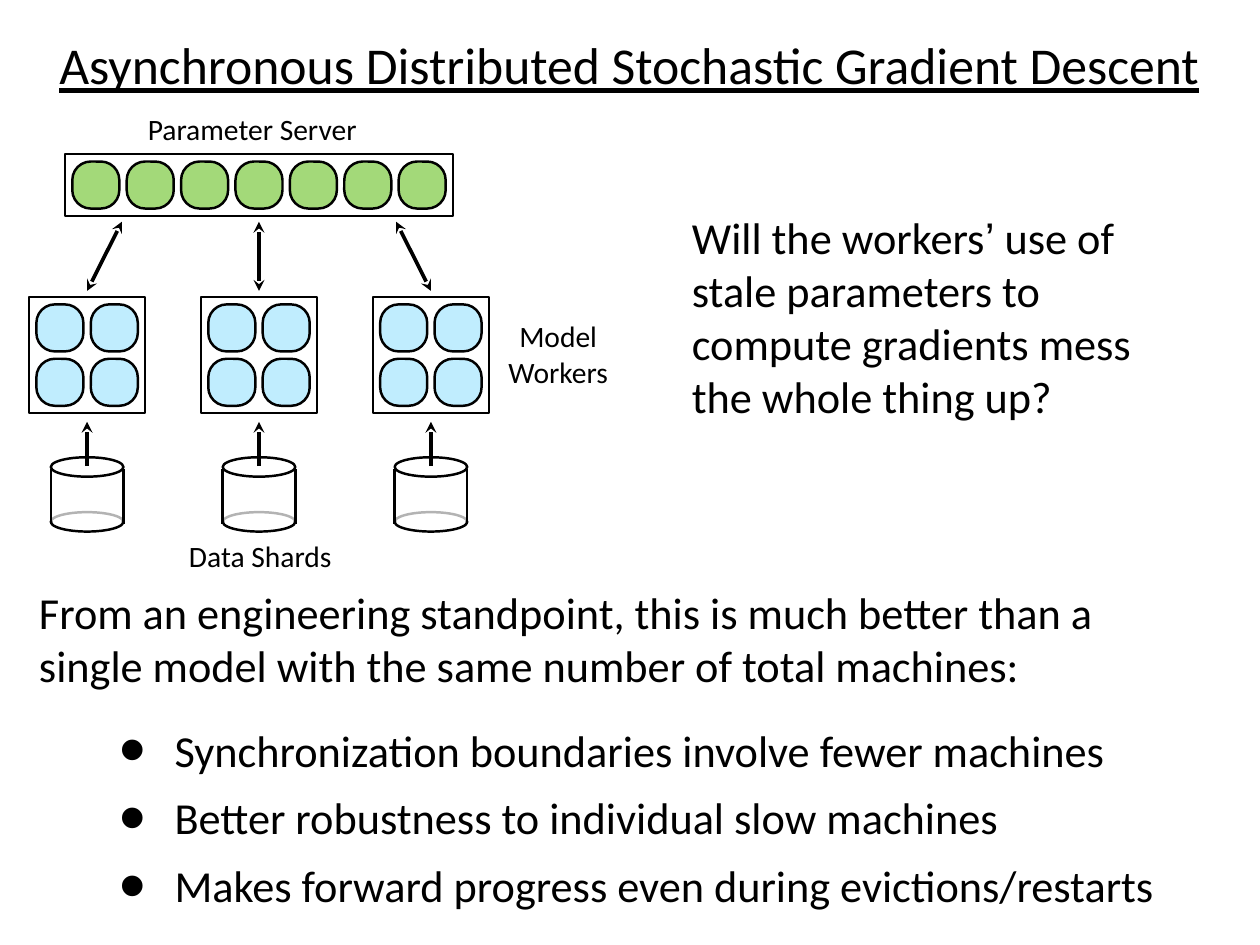
from lxml.etree import SubElement
from pptx import Presentation
from pptx.dml.color import RGBColor
from pptx.enum.shapes import MSO_CONNECTOR, MSO_SHAPE
from pptx.enum.text import MSO_ANCHOR, MSO_AUTO_SIZE, PP_ALIGN
from pptx.oxml.ns import qn
from pptx.util import Pt

BLACK = RGBColor(0x00, 0x00, 0x00)
WHITE = RGBColor(0xFF, 0xFF, 0xFF)
GREEN = RGBColor(0xA3, 0xD9, 0x79)
BLUE = RGBColor(0xC0, 0xED, 0xFE)

CELL, GAP = 38.2, 6
LINE_WIDTH, ARROW_WIDTH = 2, 3
FRAME_FORMAT = {
    "word_wrap": True,
    "auto_size": MSO_AUTO_SIZE.NONE,
    "vertical_anchor": MSO_ANCHOR.MIDDLE,
    "margin_left": 0,
    "margin_top": 0,
    "margin_right": 0,
    "margin_bottom": 0,
}


def set_attributes(target, values):
    """Set every attribute of target named in values."""
    for name, value in values.items():
        setattr(target, name, value)


def write_text(frame, paragraphs, size, alignment=PP_ALIGN.LEFT, underline=None):
    """Fill a text frame, setting apostrophes in Arial and the rest in Calibri."""
    set_attributes(frame, FRAME_FORMAT)
    for index, text in enumerate(paragraphs):
        paragraph = frame.add_paragraph() if index else frame.paragraphs[0]
        paragraph.alignment = alignment
        before, apostrophe, after = text.partition("’")
        for piece in filter(None, (before, apostrophe, after)):
            run = paragraph.add_run()
            run.text = piece
            name = "Arial" if piece == "’" else "Calibri"
            set_attributes(run.font, {"name": name, "size": Pt(size), "underline": underline})
            run.font.color.rgb = BLACK


def add_text(slide, box, paragraphs, size, alignment=PP_ALIGN.LEFT):
    """Add a text box and return its frame."""
    frame = slide.shapes.add_textbox(*map(Pt, box)).text_frame
    write_text(frame, paragraphs, size, alignment)
    return frame


def add_outline(slide, kind, box, fill=None, outlined=True):
    """Add a preset shape with an optional fill and black outline."""
    shape = slide.shapes.add_shape(kind, *map(Pt, box))
    shape.shadow.inherit = False
    if fill is None:
        shape.fill.background()
    else:
        shape.fill.solid()
        shape.fill.fore_color.rgb = fill
    if outlined:
        shape.line.color.rgb = BLACK
        shape.line.width = Pt(LINE_WIDTH)
    else:
        shape.line.fill.background()
    return shape


def add_line(slide, start, end, width, arrowheads=()):
    """Add a straight black line with stealth heads at the named ends."""
    line = slide.shapes.add_connector(MSO_CONNECTOR.STRAIGHT, *map(Pt, start + end))
    line.line.color.rgb = BLACK
    line.line.width = Pt(width)
    outline = line.line._get_or_add_ln()
    for arrowhead in arrowheads:
        SubElement(outline, qn(f"a:{arrowhead}"), type="stealth")
    SubElement(line._element.spPr, qn("a:effectLst"))


def add_cells(slide, box, columns, rows, fill):
    """Draw a frame holding an even grid of rounded cells."""
    left, top, width, height = box
    pitch = CELL + GAP
    for row in range(rows):
        for column in range(columns):
            place = (left + GAP + column * pitch, top + GAP + row * pitch, CELL, CELL)
            cell = add_outline(slide, MSO_SHAPE.ROUNDED_RECTANGLE, place, fill)
            cell.adjustments[0] = 0.393
    add_outline(slide, MSO_SHAPE.RECTANGLE, box)


def add_shard(slide, box):
    """Draw a data cylinder with a faded back rim and an arrow rising from it."""
    left, top, width, height = box
    rim = 15.8
    add_outline(slide, MSO_SHAPE.OVAL, (left, top + height - rim, width, rim))
    veil_box = (left, top + 10, width, height - rim - 2.8)
    veil = add_outline(slide, MSO_SHAPE.RECTANGLE, veil_box, WHITE, outlined=False)
    color = veil._element.spPr.find(f".//{qn('a:srgbClr')}")
    SubElement(color, qn("a:alpha"), val="70000")
    add_outline(slide, MSO_SHAPE.OVAL, (left, top, width, rim))
    for side in (left, left + width):
        add_line(slide, (side, top + 9.4), (side, top + height - 6.5), LINE_WIDTH)
    center = left + width / 2
    add_line(slide, (center, top + 7.2), (center, top - 28.8), ARROW_WIDTH, ["tailEnd"])


def add_diagram(slide, box):
    """Draw the parameter server, the model workers and the data shards."""
    left, top, width, height = box
    columns, pitch, spread = 7, 139.7, 111.4
    worker = 2 * CELL + 3 * GAP
    server_width = columns * CELL + (columns + 1) * GAP
    center = left + worker / 2 + pitch
    server = (center - server_width / 2, top + 38.9, server_width, CELL + 2 * GAP)
    add_text(slide, (left + 96.5, top, 181, 36), ["Parameter Server"], 24)
    add_cells(slide, server, columns, 1, GREEN)
    for position in (-1, 0, 1):
        middle = center + position * pitch
        add_cells(slide, (middle - worker / 2, top + 155, worker, worker), 2, 2, BLUE)
        add_line(slide, (center + position * spread, top + 93.8), (middle, top + 150),
                 ARROW_WIDTH, ["headEnd", "tailEnd"])
        add_shard(slide, (middle - 29.5, top + 285.2, 59, 60.4))
    labels_right = left + width - 104
    add_text(slide, (labels_right, top + 169, 104, 64), ["Model", "Workers"], 24, PP_ALIGN.CENTER)
    add_text(slide, (center - 80, top + height - 36, 162, 36), ["Data Shards"], 24, PP_ALIGN.CENTER)


def add_title(slide, box, text):
    """Place the underlined slide title."""
    title = slide.shapes.title
    set_attributes(title, dict(zip(("left", "top", "width", "height"), map(Pt, box))))
    write_text(title.text_frame, [text], 42, PP_ALIGN.CENTER, True)


def add_benefits(slide, box, benefits):
    """Write the bulleted list of benefits."""
    frame = add_text(slide, box, benefits, 36)
    set_attributes(frame, {"margin_left": Pt(7.2), "margin_top": Pt(3.6), "margin_bottom": Pt(3.6)})
    for index, paragraph in enumerate(frame.paragraphs):
        paragraph.space_before = Pt(12 if index else 0)
        properties = paragraph._p.get_or_add_pPr()
        properties.set("marL", str(Pt(70)))
        properties.set("indent", str(Pt(-44.6)))
        SubElement(properties, qn("a:buSzPct"), val="171000")
        SubElement(properties, qn("a:buFont"), typeface="Arial")
        SubElement(properties, qn("a:buChar"), char="•")


def main():
    """Build and save the slide."""
    presentation = Presentation()
    set_attributes(presentation, {"slide_width": Pt(1024), "slide_height": Pt(768)})
    slide = presentation.slides.add_slide(presentation.slide_layouts[5])
    add_title(slide, (7.2, 23.8, 1008.7, 56.9), "Asynchronous Distributed Stochastic Gradient Descent")
    add_diagram(slide, (23.6, 86.4, 482, 383))
    add_benefits(slide, (64.8, 581, 928, 166.3), [
        "Synchronization boundaries involve fewer machines",
        "Better robustness to individual slow machines",
        "Makes forward progress even during evictions/restarts",
    ])
    add_text(slide, (31.7, 473.5, 912.2, 90), [
        "From an engineering standpoint, this is much better than a single model "
        "with the same number of total machines:"], 36)
    add_text(slide, (562.3, 171, 413.3, 172), [
        "Will the workers’ use of stale parameters to compute gradients mess the whole thing up?"], 36)
    presentation.save("out.pptx")


if __name__ == "__main__":
    main()
